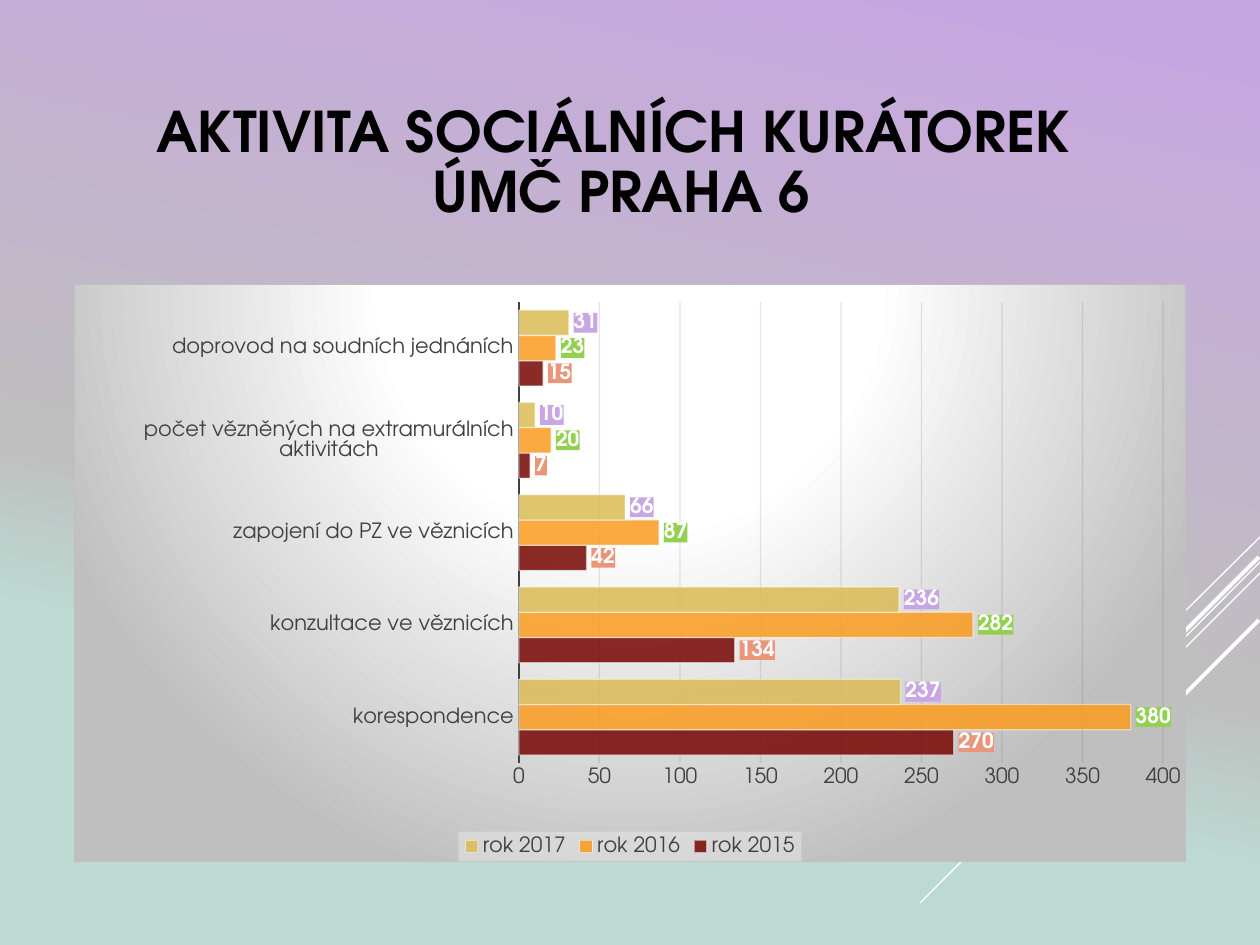
"""Build a slide with a bar chart of social curators' activity over three years."""
from dataclasses import dataclass

from lxml import etree
from pptx import Presentation
from pptx import util as u
from pptx.chart import data as cd
from pptx.dml.color import RGBColor
from pptx.enum import chart as ce
from pptx.enum import shapes as es
from pptx.enum import text as et
from pptx.oxml import parse_xml
from pptx.oxml.ns import qn

PX = 914400 / 126
FONT = "TeX Gyre Adventor"
WHITE = RGBColor(0xFF, 0xFF, 0xFF)
BLACK = RGBColor(0, 0, 0)
GREY = RGBColor(0xBF, 0xBF, 0xBF)
PALE = RGBColor(0xF2, 0xF2, 0xF2)
DARK = RGBColor(0x40, 0x40, 0x40)
GRID = RGBColor(0x0D, 0x0D, 0x0D)
LILAC = RGBColor(0xC8, 0xA5, 0xE3)
MINT = RGBColor(0xBC, 0xDA, 0xD1)
GREEN = RGBColor(0x92, 0xD0, 0x50)
SALMON = RGBColor(0xE9, 0x96, 0x7A)
WINE = RGBColor(0x76, 0x06, 0x03)
AMBER = RGBColor(0xFA, 0x9C, 0x1F)
GOLD = RGBColor(0xD9, 0xBB, 0x55)
NS = ('xmlns:a="http://schemas.openxmlformats.org/drawingml/2006/main" '
      'xmlns:c="http://schemas.openxmlformats.org/drawingml/2006/chart"')


@dataclass
class Ray:
    x: int
    y: int
    end_x: int
    end_y: int
    width: float


@dataclass
class Year:
    name: str
    vals: tuple
    color: RGBColor
    tag: RGBColor


RAYS = (
    Ray(1260, 537, 1155, 641, 0.75),
    Ray(1260, 562, 920, 903, 0.75),
    Ray(1260, 573, 1043, 790, 0.75),
    Ray(1259, 557, 1061, 755, 2.25),
    Ray(1259, 620, 1115, 764, 2.25),
)
CATS = ("korespondence", "konzultace ve věznicích", "zapojení do PZ ve věznicích",
        "počet vězněných na extramurálních aktivitách",
        "doprovod na soudních jednáních")
YEARS = (
    Year("rok 2015", (270, 134, 42, 7, 15), WINE, SALMON),
    Year("rok 2016", (380, 282, 87, 20, 23), AMBER, GREEN),
    Year("rok 2017", (237, 236, 66, 10, 31), GOLD, LILAC),
)


def px(*vals: int) -> list:
    return [u.Emu(round(v * PX)) for v in vals]


def style(font, size: int, color: RGBColor, bold: bool = False) -> None:
    font.name, font.size, font.bold = FONT, u.Pt(size), bold
    font.color.rgb = color


def fade(root, alpha: int) -> None:
    for node in root.iter(qn("a:srgbClr")):
        etree.SubElement(node, qn("a:alpha"), val=str(alpha * 1000))


def solid(color: RGBColor, alpha: int = 100) -> str:
    return (f'<a:solidFill><a:srgbClr val="{color}"><a:alpha val="{alpha * 1000}"/>'
            '</a:srgbClr></a:solidFill>')


def blend(stops: tuple, way: str) -> str:
    marks = "".join(f'<a:gs pos="{pos * 1000}"><a:srgbClr val="{color}"/></a:gs>'
                    for pos, color in stops)
    return f'<a:gradFill {NS} rotWithShape="1"><a:gsLst>{marks}</a:gsLst>{way}</a:gradFill>'


def paint(owner, body: str) -> None:
    """Put fill and line ahead of the text properties of a chart part."""
    node = parse_xml(f"<c:spPr {NS}>{body}</c:spPr>")
    owner.find(qn("c:txPr")).addprevious(node)


def back(slide) -> None:
    fill = slide.background.fill
    fill.solid()
    old = next(slide.background._cSld.iter(qn("a:solidFill")))
    way = f'<a:lin ang="{102 * 60000}" scaled="0"/>'
    new = parse_xml(blend(((1, LILAC), (58, GREY), (72, MINT)), way))
    old.getparent().replace(old, new)


def draw_ray(slide, ray: Ray) -> None:
    line = slide.shapes.add_connector(
        es.MSO_CONNECTOR.STRAIGHT, *px(ray.x, ray.y, ray.end_x, ray.end_y))
    line.line.color.rgb = WHITE
    line.line.width = u.Pt(ray.width)
    etree.SubElement(line._element.spPr, qn("a:effectLst"))


def title(slide) -> None:
    frame = slide.shapes.add_textbox(*px(73, 59, 1097, 172)).text_frame
    frame.word_wrap = True
    frame.vertical_anchor = et.MSO_ANCHOR.BOTTOM
    para = frame.paragraphs[0]
    para.alignment = et.PP_ALIGN.CENTER
    para.line_spacing = 0.9
    for num, words in enumerate(("AKTIVITA SOCIÁLNÍCH KURÁTOREK ", "ÚMČ PRAHA 6")):
        if num:
            para.add_line_break()
        run = para.add_run()
        run.text = words
        style(run.font, 32, BLACK, True)


def draw_year(plot, year: Year, bars) -> None:
    bars.format.fill.solid()
    bars.format.fill.fore_color.rgb = year.color
    fade(bars._element, 85)
    bars.format.line.color.rgb = WHITE
    bars.format.line.width = u.Pt(0.75)
    fade(bars.format.line._ln, 50)
    bars.invert_if_negative = False
    tags = bars.data_labels
    tags.show_value = True
    tags.position = ce.XL_LABEL_POSITION.OUTSIDE_END
    style(tags.font, 12, WHITE, True)
    paint(tags._element, solid(year.tag))


def axes(chart) -> None:
    cat, val = chart.category_axis, chart.value_axis
    for axis in (cat, val):
        axis.major_tick_mark = axis.minor_tick_mark = ce.XL_TICK_MARK.NONE
        style(axis.tick_labels.font, 12, DARK)
    cat.has_major_gridlines = False
    cat.format.line.color.rgb = DARK
    cat.format.line.width = u.Pt(1.5)
    val.minimum_scale, val.maximum_scale, val.major_unit = 0, 400, 50
    val.format.line.fill.background()
    val.has_major_gridlines = True
    grid = val.major_gridlines.format.line
    grid.color.rgb = GRID
    grid.width = u.Pt(0.75)
    fade(grid._ln, 10)


def place(chart) -> None:
    """Fix the inner plot area as fractions of the chart."""
    area = chart._chartSpace.chart.plotArea
    for old in area.findall(qn("c:layout")):
        area.remove(old)
    spots = "".join(f'<c:{key} val="{val}"/>' for key, val in (
        ("layoutTarget", "inner"), ("xMode", "edge"), ("yMode", "edge"),
        ("x", 0.4), ("y", 0.03), ("w", 0.58), ("h", 0.8)))
    area.insert(0, parse_xml(
        f"<c:layout {NS}><c:manualLayout>{spots}</c:manualLayout></c:layout>"))


def graph(slide) -> None:
    data = cd.CategoryChartData()
    data.categories = CATS
    for year in YEARS:
        data.add_series(year.name, year.vals)
    chart = slide.shapes.add_chart(
        ce.XL_CHART_TYPE.BAR_CLUSTERED, *px(74, 284, 1112, 578), data).chart
    chart.has_title = False
    style(chart.font, 10, WHITE)
    way = ('<a:path path="circle"><a:fillToRect l="50000" t="-80000" '
           'r="50000" b="180000"/></a:path>')
    paint(chart._chartSpace, blend(((0, WHITE), (39, WHITE), (100, GREY)), way)
          + f'<a:ln w="9525">{solid(GREY)}</a:ln>')
    plot = chart.plots[0]
    plot.gap_width, plot.overlap, plot.vary_by_categories = 65, 0, False
    for year, bars in zip(YEARS, plot.series):
        draw_year(plot, year, bars)
    axes(chart)
    place(chart)
    chart.has_legend = True
    chart.legend.position = ce.XL_LEGEND_POSITION.BOTTOM
    chart.legend.include_in_layout = False
    style(chart.legend.font, 12, DARK)
    paint(chart.legend._element, solid(PALE, 39))


def main() -> None:
    deck = Presentation()
    deck.slide_width, deck.slide_height = px(1260, 945)
    slide = deck.slides.add_slide(deck.slide_layouts[6])
    back(slide)
    for ray in RAYS:
        draw_ray(slide, ray)
    title(slide)
    graph(slide)
    deck.save("out.pptx")


if __name__ == "__main__":
    main()
